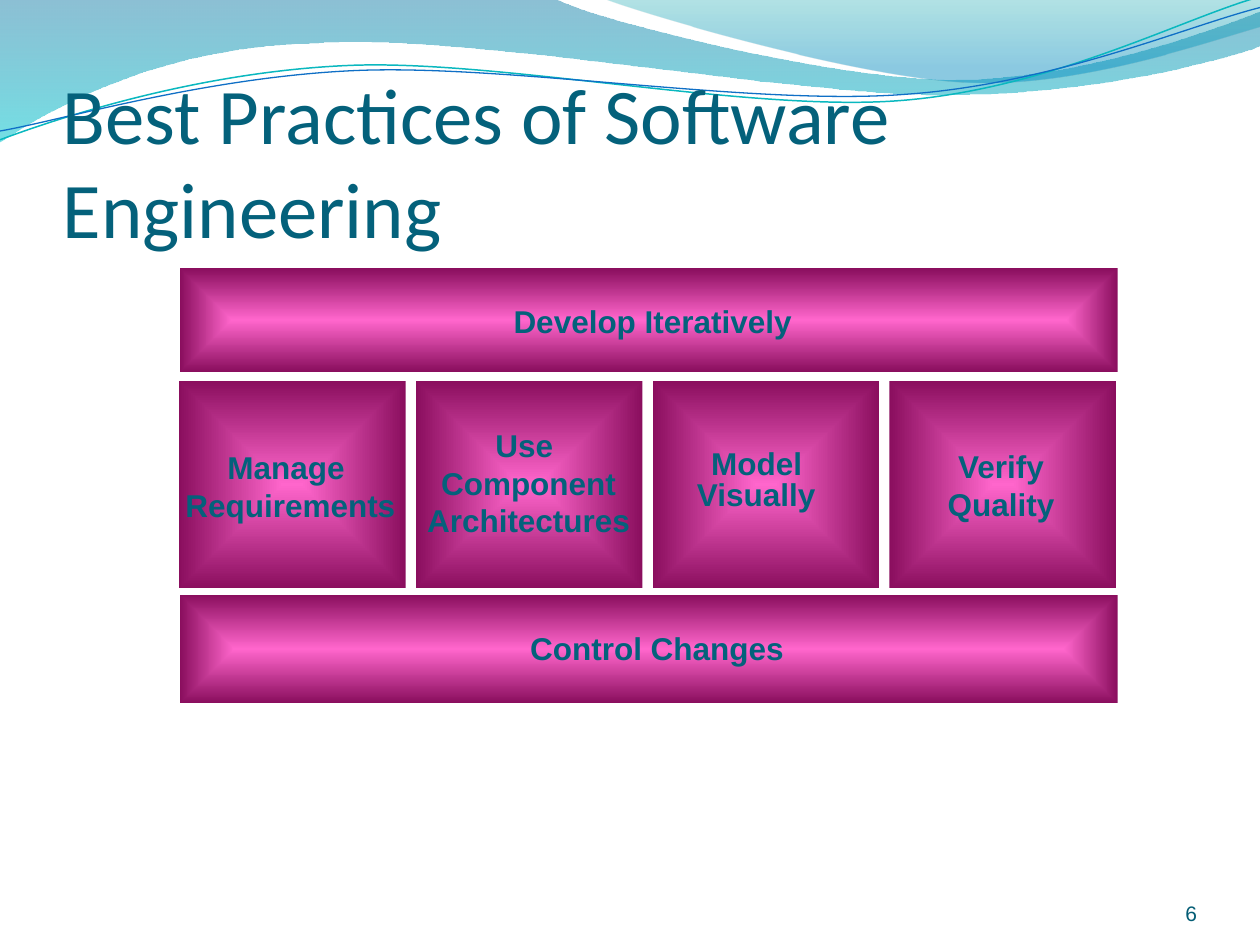
import dataclasses
import typing

import pptx
import pptx.dml.color
import pptx.enum.shapes
import pptx.enum.text
import pptx.oxml
import pptx.oxml.ns
import pptx.util

RGB = pptx.dml.color.RGBColor
IN = pptx.util.Inches
PT = pptx.util.Pt
QN = pptx.oxml.ns.qn
NS = pptx.oxml.ns.nsdecls("a")
ALIGN = pptx.enum.text.PP_ALIGN
ANCHOR = pptx.enum.text.MSO_ANCHOR

TEAL = RGB(0x04, 0x61, 0x7B)
DARK_TEAL = RGB(0x04, 0x5D, 0x75)
PINK = RGB(0xFF, 0x66, 0xCC)
PLUM = RGB(0x8A, 0x0E, 0x5E)
SEA = RGB(0x00, 0x74, 0xA1)
AQUA = RGB(0x00, 0xC6, 0xCF)
LAGOON = RGB(0x00, 0xA1, 0xA9)
SKY = RGB(0x00, 0x8B, 0xBF)
CYAN = RGB(0x0A, 0xB8, 0xBF)
BLUE = RGB(0x0F, 0x6F, 0xC6)

# Grid of the practice blocks: four columns and three rows
LEFT, COL_W, PITCH = 1.42, 1.8, 1.88
BAR_LEFT, BAR_W = 1.43, 7.44
ROWS = ((2.13, 0.82), (3.02, 1.65), (4.72, 0.86))  # top, height


class Stop(typing.NamedTuple):
    pos: int
    color: RGB
    alpha: int = 100


LINEAR = '<a:lin ang="5400000" scaled="1"/>'
FROM_CENTRE = ('<a:path path="rect"><a:fillToRect l="50000" t="50000" '
               'r="50000" b="50000"/></a:path>')
BLOCK_STOPS = (Stop(0, PINK), Stop(100, PLUM))


@dataclasses.dataclass
class Wave:
    """Points of a chain: a 2-tuple is a corner, a 6-tuple a Bezier segment."""
    points: tuple
    stops: tuple = ()
    line: RGB | None = None
    width: float = 0


@dataclasses.dataclass
class Label:
    lines: tuple[str, ...]
    box: tuple[float, float, float, float]
    size: float = 18
    font: str = "Arial"
    color: RGB = TEAL
    bold: bool = True
    align: ALIGN = ALIGN.CENTER
    spacing: float | None = None
    end_space: float = 0  # size of a plain space closing the last line
    frame: dict = dataclasses.field(default_factory=dict)


@dataclasses.dataclass
class Block:
    row: int
    col: int | None  # None: a bar across all columns
    label: Label


WAVES = (
    Wave(((0, 0), (4.4, -0.01), (4.76, 0.17, 6.64, 0.63, 7.58, 0.63),
          (8.53, 0.63, 9.58, 0.26, 10, 0.09), (10.01, 0.36),
          (9.83, 0.44, 8.7, 0.76, 7.46, 0.75), (6.22, 0.75, 3.82, 0.28, 2.57, 0.34),
          (1.29, 0.36, 0.46, 0.83, -0.01, 1.13)),
         (Stop(0, SEA, 45), Stop(100, AQUA, 55))),
    Wave(((4.79, -0.01), (5.09, 0.11, 6.82, 0.62, 7.69, 0.65),
          (8.56, 0.69, 9.61, 0.32, 10, 0.21), (10, 0)),
         (Stop(0, LAGOON, 30), Stop(80, SKY, 45))),
    Wave(((0, 1.11), (0.48, 0.93, 1.58, 0.57, 2.77, 0.52),
          (3.95, 0.47, 5.93, 0.89, 7.13, 0.8), (8.33, 0.71, 9.38, 0.15, 9.98, -0.02)),
         line=CYAN, width=0.85),
    Wave(((0, 1.04), (0.47, 0.96, 1.64, 0.61, 2.83, 0.56),
          (4.03, 0.51, 5.97, 0.84, 7.17, 0.75), (8.36, 0.67, 9.41, 0.21, 10, 0.06)),
         line=BLUE, width=0.75),
)

NO_WRAP = {"word_wrap": False}
MIDDLE = {"word_wrap": False, "vertical_anchor": ANCHOR.MIDDLE}
NO_INSET = {"margin_left": 0, "margin_right": 0, "margin_bottom": 0,
            "vertical_anchor": ANCHOR.BOTTOM}

TEXTS = (
    Label(("Best Practices of Software Engineering",), (0.5, 0.77, 9, 1.25), 45,
          "Calibri", bold=False, align=ALIGN.LEFT, frame=NO_INSET),
    Label(("6",), (8.67, 6.95, 0.83, 0.4), 12, color=DARK_TEAL, bold=False,
          align=ALIGN.RIGHT, frame=NO_INSET | {"margin_top": 0}),
)

BLOCKS = (
    Block(0, None, Label(("Develop Iteratively",), (3.89, 2.36, 2.58, 0.37), frame=MIDDLE)),
    Block(2, None, Label(("Control Changes",), (4.11, 4.94, 2.24, 0.4), align=ALIGN.LEFT)),
    Block(1, 1, Label(("Use ", "Component\vArchitectures"), (3.29, 3.33, 1.81, 1),
                      frame=NO_WRAP)),
    Block(1, 0, Label(("Manage ", "Requirements"), (1.37, 3.51, 1.87, 0.7), frame=NO_WRAP)),
    Block(1, 2, Label(("Model ", "Visually"), (5.39, 3.58, 1.3, 0.51), spacing=0.75,
                      end_space=20, frame=MIDDLE)),
    Block(1, 3, Label(("Verify", "Quality"), (7.42, 3.5, 1.05, 0.7), frame=NO_WRAP)),
)


def set_gradient(sp, stops: typing.Iterable[Stop], direction: str) -> None:
    """Swap the fill for a gradient, with transparency where a stop asks for it."""
    sp.fill.background()
    gs = "".join(f'<a:gs pos="{s.pos * 1000}"><a:srgbClr val="{s.color}">'
                 f'<a:alpha val="{s.alpha * 1000}"/></a:srgbClr></a:gs>' for s in stops)
    grad = pptx.oxml.parse_xml(f'<a:gradFill {NS} rotWithShape="1">'
                               f'<a:gsLst>{gs}</a:gsLst>{direction}</a:gradFill>')
    no_fill = sp._element.spPr.find(QN("a:noFill"))
    no_fill.getparent().replace(no_fill, grad)


def bend(sp, segments: tuple, left: int, top: int) -> None:
    """Turn the straight steps of a freeform into its Bezier segments."""
    steps = list(sp._element.iter(QN("a:lnTo")))
    for step, seg in zip(steps, segments):
        if len(seg) == 6:
            pts = "".join(f'<a:pt x="{x - left}" y="{y - top}"/>'
                          for x, y in zip(map(IN, seg[::2]), map(IN, seg[1::2])))
            curve = pptx.oxml.parse_xml(f"<a:cubicBezTo {NS}>{pts}</a:cubicBezTo>")
            step.getparent().replace(step, curve)


def draw_wave(slide, wave: Wave) -> None:
    ends = [(IN(seg[-2]), IN(seg[-1])) for seg in wave.points]
    fb = slide.shapes.build_freeform(*ends[0])
    fb.add_line_segments(ends[1:], close=bool(wave.stops))
    sp = fb.convert_to_shape()
    bend(sp, wave.points[1:], min(x for x, _ in ends), min(y for _, y in ends))
    sp.shadow.inherit = False
    if wave.stops:
        set_gradient(sp, wave.stops, LINEAR)
        sp.line.fill.background()
    else:
        sp.fill.background()
        sp.line.color.rgb = wave.line
        sp.line.width = PT(wave.width)


def draw_label(slide, label: Label) -> None:
    tf = slide.shapes.add_textbox(*map(IN, label.box)).text_frame
    for name, value in ({"word_wrap": True} | label.frame).items():
        setattr(tf, name, value)
    font = {"size": PT(label.size), "name": label.font, "bold": label.bold}
    for i, line in enumerate(label.lines):
        p = tf.add_paragraph() if i else tf.paragraphs[0]
        p.text = line
        p.alignment = label.align
        p.line_spacing = label.spacing
        for r in p.runs:
            for name, value in font.items():
                setattr(r.font, name, value)
            r.font.color.rgb = label.color
    if label.end_space:
        r = p.add_run()
        r.text = " "
        r.font.size, r.font.name = PT(label.end_space), label.font


def draw_block(slide, block: Block) -> None:
    top, height = ROWS[block.row]
    if block.col is None:
        left, width = BAR_LEFT, BAR_W
    else:
        left, width = LEFT + block.col * PITCH, COL_W
    sp = slide.shapes.add_shape(pptx.enum.shapes.MSO_SHAPE.RECTANGLE,
                                IN(left), IN(top), IN(width), IN(height))
    sp.shadow.inherit = False
    set_gradient(sp, BLOCK_STOPS, FROM_CENTRE)
    sp.line.fill.background()
    draw_label(slide, block.label)


def main() -> None:
    prs = pptx.Presentation()
    prs.slide_width, prs.slide_height = IN(10), IN(7.5)
    slide = prs.slides.add_slide(prs.slide_layouts[6])
    # Wavy header
    for wave in WAVES:
        draw_wave(slide, wave)
    # Title and page number
    for label in TEXTS:
        draw_label(slide, label)
    # Practice blocks
    for block in BLOCKS:
        draw_block(slide, block)
    prs.save("out.pptx")


if __name__ == "__main__":
    main()
